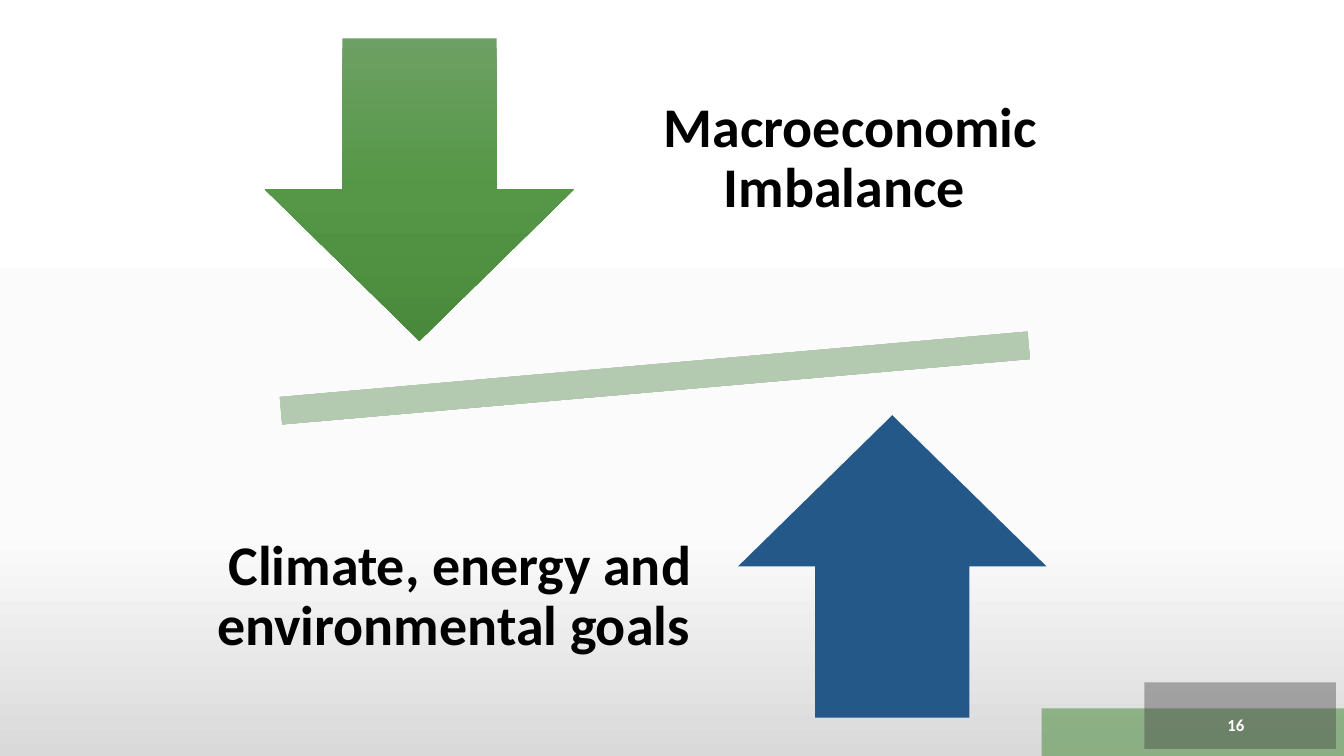
import pptx
import pptx.util
import pptx.dml.color
import pptx.enum.shapes
import pptx.enum.text
import pptx.oxml.ns
from lxml import etree

WIDE, HIGH = 13.33, 7.5
FONT = "Calibri"
KIND = pptx.enum.shapes.MSO_SHAPE
ALIGN = pptx.enum.text.PP_ALIGN

HUES = {
    "green": "57934A", "grey": "3F3F3F", "blue": "235888",
    "white": "FFFFFF", "black": "000000",
}
FADES = {
    "back": [(0, "FFFFFF"), (71, "FBFBFB"), (100, "D9D9D9")],
    "beam": [(0, "BECFBB"), (50, "B3C9B0"), (100, "9EB49B")],
    "down": [(0, "6DA064"), (50, "559746"), (100, "49893B")],
}

# Boxes are left, top, width, height in percent of the slide.
SHAPES = [
    (KIND.RECTANGLE, (77.5, 93.7, 22.5, 6.3), "green", 60, 0),
    (KIND.RECTANGLE, (85.15, 90.27, 14.25, 8.8), "grey", 40, 0),
    (KIND.MATH_MINUS, (10.73, 42.27, 75.99, 15.47), "beam", 100, 355),
    (KIND.DOWN_ARROW, (19.73, 5.07, 22.96, 40), "down", 100, 0),
    (KIND.UP_ARROW, (54.91, 54.93, 22.96, 40), "blue", 100, 0),
]
TEXTS = [
    ("16", (70.82, 93.2, 22.5, 5.33), 12, "white", ALIGN.RIGHT, 0.1, 1),
    ("Macroeconomic Imbalance ", (46.29, 0, 33.98, 42.13),
     40, "black", ALIGN.CENTER, 0.31, 0.9),
    ("Climate, energy and environmental goals ", (12.08, 58, 44.26, 42),
     40, "black", ALIGN.CENTER, 0.31, 0.9),
]


def place(box):
    sides = (WIDE, HIGH, WIDE, HIGH)
    return [pptx.util.Inches(part * side / 100)
            for part, side in zip(box, sides)]


def color(name):
    return pptx.dml.color.RGBColor.from_string(HUES[name])


def fade(fill, root, stops):
    qn = pptx.oxml.ns.qn
    fill.gradient()
    fill.gradient_angle = 270
    ramp = root.find(".//" + qn("a:gsLst"))
    for stop in list(ramp):
        ramp.remove(stop)
    for spot, hue in stops:
        stop = etree.SubElement(ramp, qn("a:gs"), pos=str(spot * 1000))
        etree.SubElement(stop, qn("a:srgbClr"), val=hue)


def draw(slide, kind, box, paint, alpha, turn):
    shape = slide.shapes.add_shape(kind, *place(box))
    shape.shadow.inherit = False
    shape.line.fill.background()
    shape.rotation = turn
    if paint in FADES:
        fade(shape.fill, shape._element, FADES[paint])
        return
    shape.fill.solid()
    shape.fill.fore_color.rgb = color(paint)
    if alpha < 100:
        qn = pptx.oxml.ns.qn
        tint = shape._element.spPr.find(".//" + qn("a:srgbClr"))
        etree.SubElement(tint, qn("a:alpha"), val=str(alpha * 1000))


def write(slide, words, box, size, hue, align, inset, pitch):
    frame = slide.shapes.add_textbox(*place(box)).text_frame
    frame.word_wrap = True
    frame.vertical_anchor = pptx.enum.text.MSO_ANCHOR.MIDDLE
    pad = pptx.util.Inches(inset)
    frame.margin_left = frame.margin_right = pad
    frame.margin_top = frame.margin_bottom = min(pad, pptx.util.Inches(inset))
    para = frame.paragraphs[0]
    para.alignment = align
    para.line_spacing = pitch
    run = para.add_run()
    run.text = words
    run.font.name = FONT
    run.font.size = pptx.util.Pt(size)
    run.font.bold = True
    run.font.color.rgb = color(hue)


def main():
    deck = pptx.Presentation()
    deck.slide_width = pptx.util.Inches(WIDE)
    deck.slide_height = pptx.util.Inches(HIGH)
    slide = deck.slides.add_slide(deck.slide_layouts[6])
    fade(slide.background.fill, slide._element, FADES["back"])
    for item in SHAPES:
        draw(slide, *item)
    for item in TEXTS:
        write(slide, *item)
    deck.save("out.pptx")


if __name__ == "__main__":
    main()
